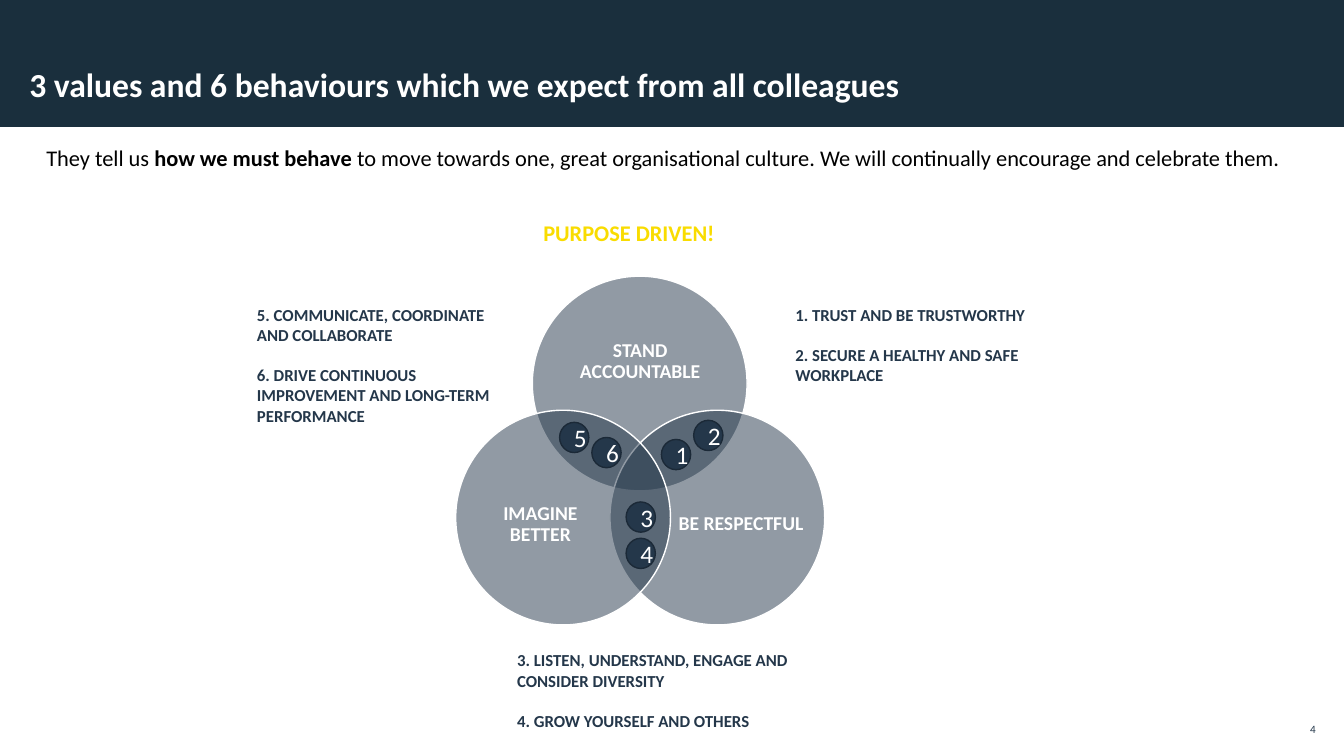
"""Build the slide on three values and six behaviours."""
from lxml import etree
from pptx import Presentation
from pptx.dml.color import RGBColor
from pptx.enum import shapes, text
from pptx.oxml import ns
from pptx.util import Inches, Pt

NAVY, BAND, RIM, WHITE, BLACK, YELLOW = (
    "24374A", "1A2F3D", "1B2937", "FFFFFF", "000000", "F9DC00")
FONT = "Calibri"
TITLE = "3 values and 6 behaviours which we expect from all colleagues"
INTRO = [
    ("They tell us ", False),
    ("how we must behave ", True),
    ("to move towards one, great organisational culture. "
     "We will continually encourage and celebrate them.", False),
]
CIRCLE = 2.13
VALUES = [
    ("STAND ACCOUNTABLE", (5.28, 2.74), (5.57, 3.11, 1.56, 0.96)),
    ("BE RESPECTFUL", (6.05, 4.07), (6.71, 4.62, 1.28, 1.17)),
    ("IMAGINE BETTER", (4.52, 4.07), (4.72, 4.62, 1.28, 1.17)),
]
BEHAVIOURS = [
    ((7.79, 2.97, 3.09, 0.91),
     ["1. TRUST AND BE TRUSTWORTHY",
      "2. SECURE A HEALTHY AND SAFE WORKPLACE"]),
    ((2.45, 2.97, 2.79, 1.31),
     ["5. COMMUNICATE, COORDINATE AND COLLABORATE",
      "6. DRIVE CONTINUOUS IMPROVEMENT AND LONG-TERM PERFORMANCE"]),
    ((5.03, 6.4, 3.02, 0.91),
     ["3. LISTEN, UNDERSTAND, ENGAGE AND CONSIDER DIVERSITY",
      "4. GROW YOURSELF AND OTHERS"]),
]
BADGES = {"1": (6.56, 4.36), "4": (6.21, 5.34), "3": (6.21, 4.98),
          "5": (5.55, 4.19), "2": (6.88, 4.17), "6": (5.87, 4.34)}
LEFT, CENTER, RIGHT = (text.PP_ALIGN.LEFT, text.PP_ALIGN.CENTER,
                       text.PP_ALIGN.RIGHT)
MIDDLE, BOTTOM = text.MSO_ANCHOR.MIDDLE, text.MSO_ANCHOR.BOTTOM


def rgb(color):
    return RGBColor.from_string(color)


def add_run(p, words, size, color, bold=False):
    r = p.add_run()
    r.text = words
    r.font.name, r.font.size, r.font.bold = FONT, Pt(size), bold
    r.font.color.rgb = rgb(color)


def clear_insets(tf):
    tf.margin_left = tf.margin_right = tf.margin_top = tf.margin_bottom = 0


def add_box(s, box, runs, size, color, align=LEFT, anchor=None):
    tf = s.shapes.add_textbox(*map(Inches, box)).text_frame
    tf.word_wrap = True
    if anchor is not None:
        tf.vertical_anchor = anchor
        clear_insets(tf)
    p = tf.paragraphs[0]
    p.alignment = align
    for words, bold in runs:
        add_run(p, words, size, color, bold)
    return tf


def add_shape(s, kind, box, fill, line=None, alpha=None):
    sp = s.shapes.add_shape(kind, *map(Inches, box))
    sp.shadow.inherit = False
    sp.fill.solid()
    sp.fill.fore_color.rgb = rgb(fill)
    if alpha is not None:
        clr = sp.element.spPr.find(".//" + ns.qn("a:srgbClr"))
        etree.SubElement(clr, ns.qn("a:alpha"), val=str(alpha * 1000))
    if line:
        sp.line.color.rgb = rgb(line)
        sp.line.width = Pt(1)
    else:
        sp.line.fill.background()
    return sp


def add_title(s):
    add_shape(s, shapes.MSO_SHAPE.RECTANGLE, (0, 0, 13.33, 1.26), BAND)
    title = s.shapes.title
    s.shapes.element.append(title.element)
    title.left, title.top, title.width, title.height = map(
        Inches, (0.29, 0.25, 10.47, 0.79))
    tf = title.text_frame
    tf.vertical_anchor = BOTTOM
    tf.auto_size = text.MSO_AUTO_SIZE.NONE
    clear_insets(tf)
    p = tf.paragraphs[0]
    p.alignment, p.line_spacing = LEFT, 0.9
    add_run(p, TITLE, 24, WHITE, True)


def main():
    prs = Presentation()
    prs.slide_width, prs.slide_height = Inches(13.33), Inches(7.5)
    s = prs.slides.add_slide(prs.slide_layouts[5])
    oval = shapes.MSO_SHAPE.OVAL
    add_title(s)
    add_box(s, (11.79, 7.14, 1.26, 0.16), [("4", False)], 8, NAVY, RIGHT, BOTTOM)
    tf = add_box(s, (0.34, 1.35, 12.63, 0.5), INTRO, 16, BLACK)
    tf.margin_left = tf.margin_right = Inches(0.12)
    tf.margin_top = tf.margin_bottom = Inches(0.08)

    for name, corner, label in VALUES:
        add_shape(s, oval, (*corner, CIRCLE, CIRCLE), NAVY, WHITE, 50)
        tf = add_box(s, label, [(name, True)], 14, WHITE, CENTER, MIDDLE)
        tf.paragraphs[0].line_spacing = 0.9

    for box, (first, second) in BEHAVIOURS:
        tf = add_box(s, box, [(first, True)], 12, NAVY)
        p = tf.add_paragraph()
        p.space_before = Pt(14.5)
        add_run(p, second, 12, NAVY, True)

    for number, corner in BADGES.items():
        tf = add_shape(s, oval, (*corner, 0.29, 0.3), NAVY, RIM).text_frame
        tf.vertical_anchor = MIDDLE
        tf.paragraphs[0].alignment = CENTER
        add_run(tf.paragraphs[0], number, 18, WHITE)

    add_box(s, (5.29, 2.13, 2.13, 0.37), [("PURPOSE DRIVEN!", True)], 16, YELLOW)
    prs.save("out.pptx")


if __name__ == "__main__":
    main()
